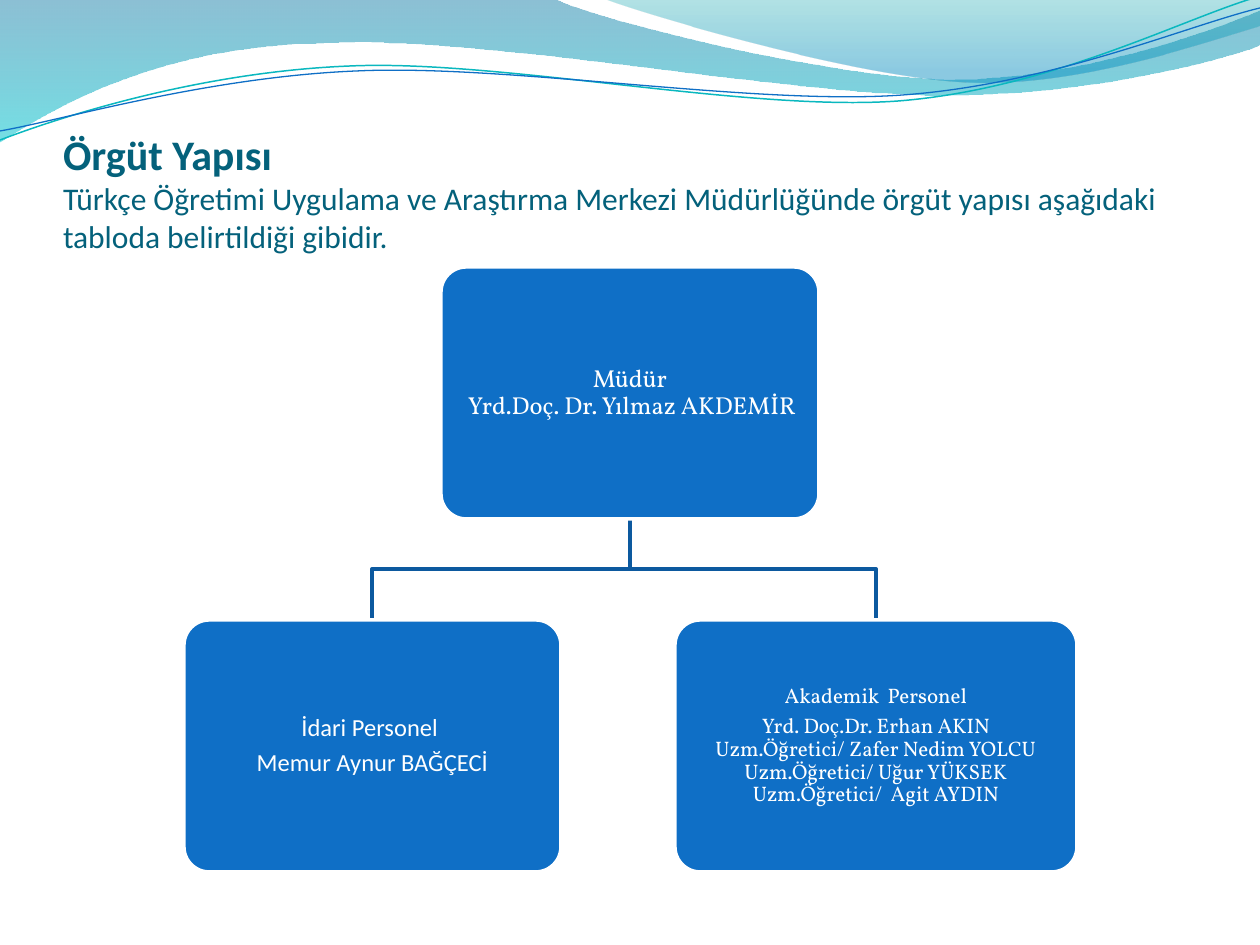
from lxml import etree
from pptx import Presentation
from pptx.dml.color import RGBColor
from pptx.enum.shapes import MSO_SHAPE
from pptx.enum.text import MSO_ANCHOR, MSO_AUTO_SIZE, PP_ALIGN
from pptx.oxml.ns import qn
from pptx.util import Pt

ROUNDED = MSO_SHAPE.ROUNDED_RECTANGLE
MIDDLE, BOTTOM = MSO_ANCHOR.MIDDLE, MSO_ANCHOR.BOTTOM
LEFT, CENTER = PP_ALIGN.LEFT, PP_ALIGN.CENTER
PX = 914400 / 126
TITLE_ONLY = 5

THEME = {
    "title": RGBColor.from_string("04617B"),
    "box": RGBColor.from_string("0F6FC6"),
    "white": RGBColor.from_string("FFFFFF"),
    "branch": RGBColor.from_string("0C599F"),
    "teal": RGBColor.from_string("0AB8BF"),
    "sans": "Calibri",
    "serif": "Vollkorn",
    "heading_size": Pt(24),
    "subtitle_size": Pt(18),
    "box_size": 14,
    "small_size": 12,
}


def px(length):
    return round(length * PX)


def draw_path(page, start, steps, closed=False):
    """Draw a path whose steps hold one point (line) or three (cubic curve)."""
    builder = page.shapes.build_freeform(*start, PX)
    builder.add_line_segments([point for step in steps for point in step], close=closed)
    shape = builder.convert_to_shape()
    shape.shadow.inherit = False
    segments = iter(list(shape.element.spPr.iter(qn("a:lnTo"))))
    for step in steps:
        parts = [next(segments) for _ in step]
        if len(parts) == 3:
            curve = etree.Element(qn("a:cubicBezTo"))
            parts[0].addprevious(curve)
            for part in parts:
                curve.append(part[0])
                part.getparent().remove(part)
    return shape


deck = Presentation()
deck.slide_width, deck.slide_height = px(1260), px(945)
page = deck.slides.add_slide(deck.slide_layouts[TITLE_ONLY])

# Header waves: start, steps, gradient stops (position, colour, opacity %)
waves = [
    ((0, 0),
     [[(554, -1)],
      [(600, 21), (837, 79), (955, 79)],
      [(1075, 79), (1207, 33), (1260, 11)],
      [(1261, 45)],
      [(1239, 55), (1096, 96), (940, 95)],
      [(784, 95), (481, 35), (324, 43)],
      [(163, 45), (58, 105), (-1, 142)]],
     [(0, "0074A1", 45), (1, "00C6CF", 55)]),
    ((604, -1),
     [[(641, 14), (859, 78), (969, 82)],
      [(1079, 87), (1211, 40), (1260, 26)],
      [(1260, 0)]],
     [(0, "00A1A9", 30), (0.8, "008BBF", 45)]),
]
for start, steps, stops in waves:
    wave = draw_path(page, start, steps, closed=True)
    wave.line.fill.background()
    wave.fill.gradient()
    wave.fill.gradient_angle = 270
    for stop, (position, colour, _) in zip(wave.fill.gradient_stops, stops):
        stop.position = position
        stop.color.rgb = RGBColor.from_string(colour)
    for node, (_, _, opacity) in zip(wave.element.spPr.iter(qn("a:srgbClr")), stops):
        etree.SubElement(node, qn("a:alpha")).set("val", str(opacity * 1000))

# Open lines: the two header curves, then the branches of the chart
CENTRE_X, ROOT_BOTTOM, BRANCH_Y, CHILD_TOP = 630, 519, 569, 620
lines = [
    ((0, 140),
     [[(60, 117), (199, 72), (349, 66)],
      [(498, 59), (747, 112), (898, 101)],
      [(1050, 89), (1182, 19), (1257, -3)]], "teal", 0.85),
    ((0, 131),
     [[(59, 121), (207, 77), (357, 71)],
      [(508, 64), (756, 106), (903, 95)],
      [(1053, 84), (1186, 26), (1260, 8)]], "box", 0.75),
]
for child_x in (372, 876):
    corners = [[(CENTRE_X, BRANCH_Y)], [(child_x, BRANCH_Y)], [(child_x, CHILD_TOP)]]
    lines.append(((CENTRE_X, ROOT_BOTTOM), corners, "branch", 2))
for start, steps, colour, width in lines:
    line = draw_path(page, start, steps)
    line.fill.background()
    line.line.color.rgb = THEME[colour]
    line.line.width = Pt(width)

# Title
title = page.shapes.title
title.left, title.top, title.width, title.height = px(63), px(86), px(1134), px(169)
frame = title.text_frame
frame.word_wrap = True
frame.auto_size = MSO_AUTO_SIZE.NONE
frame.vertical_anchor = BOTTOM
frame.margin_left = frame.margin_right = frame.margin_bottom = 0
frame.margin_top = px(6)
para = frame.paragraphs[0]
para.alignment = LEFT
para.font.name = THEME["sans"]
para.font.color.rgb = THEME["title"]
heading = para.add_run()
heading.text = "Örgüt Yapısı"
heading.font.size = THEME["heading_size"]
heading.font.bold = True
para.add_line_break()
subtitle = para.add_run()
subtitle.text = ("Türkçe Öğretimi Uygulama ve Araştırma Merkezi Müdürlüğünde "
                 "örgüt yapısı aşağıdaki tabloda belirtildiği gibidir.")
subtitle.font.size = THEME["subtitle_size"]
subtitle.font.bold = False

# Boxes: left, top, width, font, size, paragraphs
BOX_HEIGHT = 252
boxes = [
    (441, 267, 378, "serif", "box_size", ["Müdür\v Yrd.Doç. Dr. Yılmaz AKDEMİR"]),
    (184, CHILD_TOP, 377, "sans", "box_size", ["İdari Personel ", "Memur Aynur BAĞÇECİ"]),
    (675, CHILD_TOP, 402, "serif", "small_size",
     ["Akademik  Personel",
      "Yrd. Doç.Dr. Erhan AKIN\vUzm.Öğretici/ Zafer Nedim YOLCU "
      "Uzm.Öğretici/ Uğur YÜKSEK\vUzm.Öğretici/  Agit AYDIN"]),
]
for left, top, width, font, size, texts in boxes:
    box = page.shapes.add_shape(ROUNDED, px(left), px(top), px(width), px(BOX_HEIGHT))
    box.adjustments[0] = 0.1
    box.shadow.inherit = False
    box.fill.solid()
    box.fill.fore_color.rgb = THEME["box"]
    box.line.color.rgb = THEME["white"]
    box.line.width = Pt(2)
    frame = box.text_frame
    frame.word_wrap = True
    frame.vertical_anchor = MIDDLE
    frame.margin_left = frame.margin_right = frame.margin_top = frame.margin_bottom = px(7)
    for i, text in enumerate(texts):
        para = frame.add_paragraph() if i else frame.paragraphs[0]
        para.text = text
        para.alignment = CENTER
        para.line_spacing = 0.9
        para.space_after = Pt(THEME[size] * 0.35)
        para.font.name = THEME[font]
        para.font.size = Pt(THEME[size])
        para.font.color.rgb = THEME["white"]

deck.save("out.pptx")
